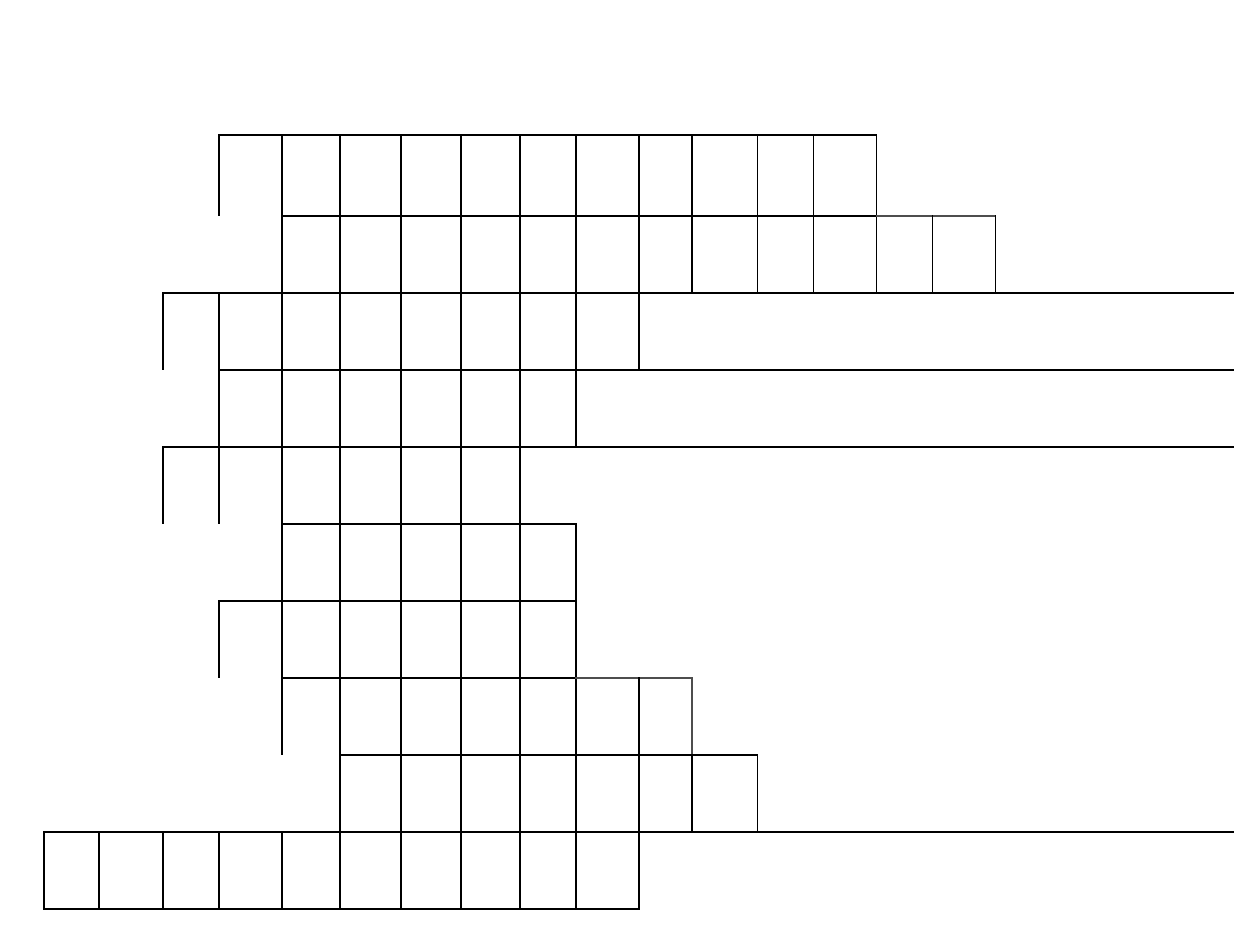
from pptx import Presentation
from pptx.dml.color import RGBColor
from pptx.oxml.ns import qn
from pptx.util import Pt
from lxml.etree import SubElement as Sub

PX = 914400 / 126
INK, GREY = "000000", "4D4D4D"
BOX = dict.fromkeys("LRTB", INK)
COLS = [55, 64, 56, 63, 58, 61, 60, 59, 56, 63, 53, 66, 56, 63, 56, 63, 238]
ROWS = [81] + [77] * 9

# First box, column after the last box, borders of the blank on the right
WORDS = [
    (3, 14, {"L": INK, "B": GREY}),
    (4, 16, {"L": INK}),
    (2, 10, {"L": INK, "T": INK}),
    (3, 9, {"L": INK, "T": INK}),
    (2, 8, {"L": INK, "T": INK, "B": INK}),
    (4, 9, {"L": INK}),
    (3, 9, {"L": INK, "B": GREY}),
    (4, 11, {"L": GREY, "B": INK}),
    (5, 12, {"L": INK}),
    (0, 10, {"L": INK, "T": INK}),
]
# Boxes with grey sides
SOFT = {(1, 14): "T", (1, 15): "T", (7, 9): "T", (7, 10): "TR"}


def px(n):
    return round(n * PX)


def tint(code):
    return RGBColor.from_string(code)


class Deck:
    font = "Calibri"
    size = 18
    line = 1

    def __init__(self, wide, high):
        self.prs = Presentation()
        self.prs.slide_width, self.prs.slide_height = px(wide), px(high)
        self.page = self.prs.slides.add_slide(self.prs.slide_layouts[6])

    def table(self, x, y, cols, rows):
        frame = self.page.shapes.add_table(
            len(rows), len(cols), px(x), px(y), px(sum(cols)), px(sum(rows)))
        grid = frame.table
        grid.first_row = grid.horz_banding = False
        # Plain style without grid lines
        style = grid._tbl.tblPr.find(qn("a:tableStyleId"))
        style.text = "{2D5ABB26-0587-4C30-8999-92F81FD0307C}"
        for col, wide in zip(grid.columns, cols):
            col.width = px(wide)
        for row, high in zip(grid.rows, rows):
            row.height = px(high)
        return grid

    def cell(self, cell, sides):
        props = cell._tc.get_or_add_tcPr()
        for side in "LRTB":
            edge = Sub(props, qn("a:ln" + side), w=str(Pt(self.line)))
            if side in sides:
                fill = Sub(edge, qn("a:solidFill"))
                Sub(fill, qn("a:srgbClr"), val=str(tint(sides[side])))
            else:
                Sub(edge, qn("a:noFill"))
        cell.fill.background()
        font = cell.text_frame.paragraphs[0].font
        font.name, font.size = self.font, Pt(self.size)

    def blank(self, grid, row, start, end, sides):
        if start == end:
            return
        first = grid.cell(row, start)
        if end - start > 1:
            first.merge(grid.cell(row, end - 1))
        self.cell(first, sides)

    def save(self):
        self.prs.save("out.pptx")


def main():
    deck = Deck(1260, 945)
    grid = deck.table(44, 135, COLS, ROWS)
    last = len(ROWS) - 2
    for row, (start, end, sides) in enumerate(WORDS):
        # Blank on the left, closed below only above the last word
        left = {"R": INK, "B": INK} if row == last else {"R": INK}
        deck.blank(grid, row, 0, start, left)
        # Letter boxes
        for col in range(start, end):
            soft = dict.fromkeys(SOFT.get((row, col), ""), GREY)
            deck.cell(grid.cell(row, col), BOX | soft)
        # Blank on the right
        deck.blank(grid, row, end, len(COLS), sides)
    deck.save()


if __name__ == "__main__":
    main()
